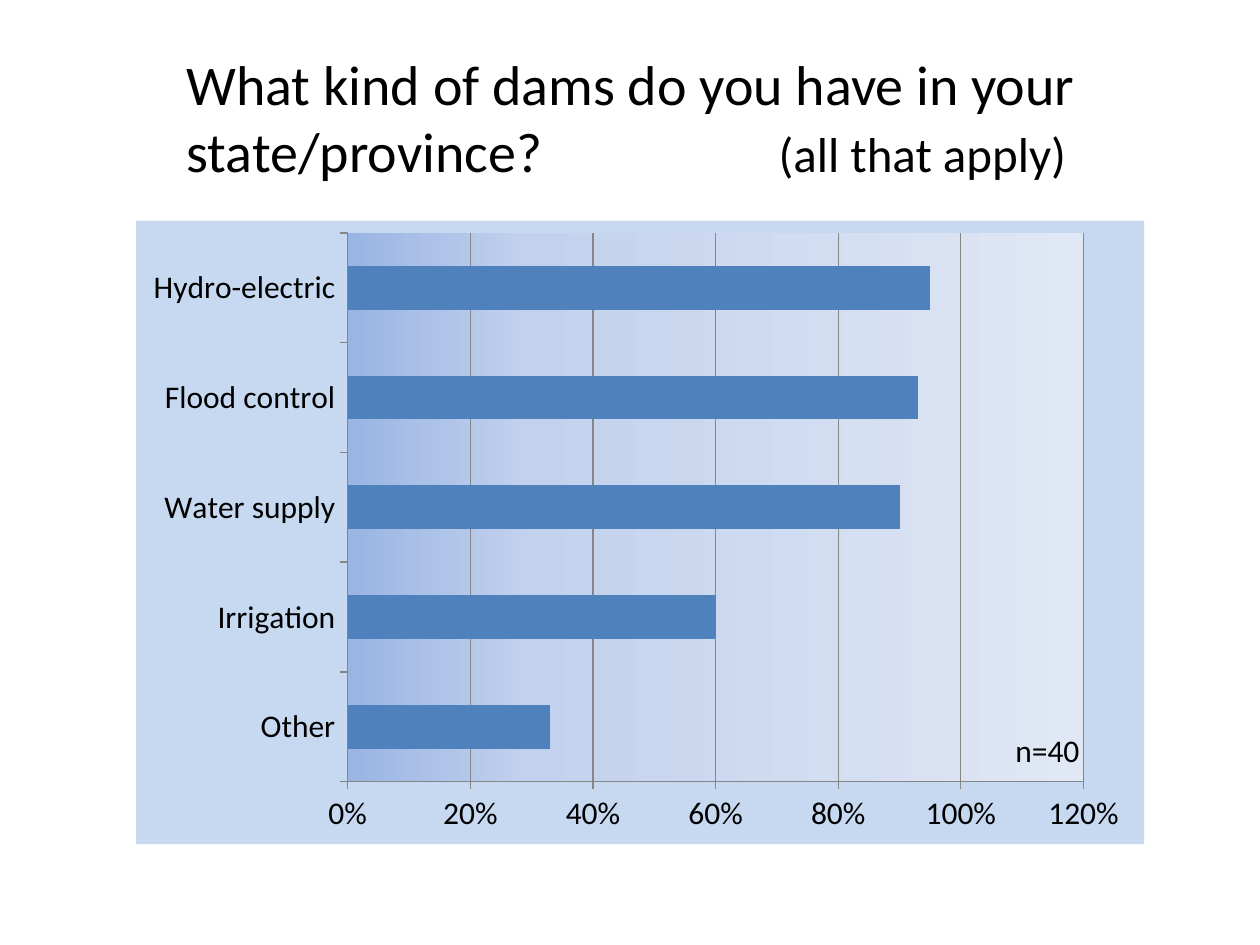
from dataclasses import dataclass

from pptx import Presentation
from pptx.chart.data import CategoryChartData
from pptx.dml.color import RGBColor
from pptx.enum.chart import XL_CHART_TYPE, XL_TICK_MARK
from pptx.enum.text import MSO_ANCHOR, MSO_AUTO_SIZE
from pptx.oxml import parse_xml
from pptx.oxml.ns import nsdecls
from pptx.util import Inches, Pt

BAR = XL_CHART_TYPE.BAR_CLUSTERED
TICK_OUT, TICK_NONE = XL_TICK_MARK.OUTSIDE, XL_TICK_MARK.NONE
MIDDLE = MSO_ANCHOR.MIDDLE
FIT_SHAPE = MSO_AUTO_SIZE.SHAPE_TO_FIT_TEXT


@dataclass(frozen=True)
class Theme:
    font: str = "Calibri"
    text: str = "000000"
    bar: str = "4F81BD"
    grid: str = "868686"
    chart_fill: str = "C6D9F1"
    plot_stops: tuple = ((0, "9AB5E4"), (25, "C2D1ED"), (100, "E1E8F5"))
    title_size: int = 32
    note_size: int = 28
    body_size: int = 18


class SlideBuilder:
    def __init__(self, slide, theme):
        self.s, self.theme = slide, theme

    def style(self, font, size):
        font.name, font.size = self.theme.font, Pt(size)
        font.color.rgb = RGBColor.from_string(self.theme.text)

    def box(self, left, top, width, height):
        sp = self.s.shapes.add_textbox(
            Inches(left), Inches(top), Inches(width), Inches(height))
        return sp.text_frame

    def title(self, text, note, at, indent, note_at):
        """Add a title whose smaller note starts at a tab stop."""
        tf = self.box(*at)
        tf.word_wrap = True
        tf.vertical_anchor = MIDDLE
        tf.margin_left = Inches(indent)
        p = tf.paragraphs[0]
        p._p.get_or_add_pPr().append(parse_xml(
            f'<a:tabLst {nsdecls("a")}><a:tab pos="{Inches(note_at)}" algn="l"/></a:tabLst>'))
        self.style(p.font, self.theme.title_size)
        for words, size in ((text + "\t", self.theme.title_size),
                            (note, self.theme.note_size)):
            r = p.add_run()
            r.text = words
            self.style(r.font, size)

    def label(self, text, at):
        tf = self.box(*at)
        tf.word_wrap = True
        tf.auto_size = FIT_SHAPE
        p = tf.paragraphs[0]
        p.text = text
        self.style(p.font, self.theme.body_size)

    def bar_chart(self, shares, at, plot):
        data = CategoryChartData(number_format="0%")
        data.categories = list(shares)
        data.add_series("Series 1", list(shares.values()))
        chart = self.s.shapes.add_chart(BAR, *map(Inches, at), data).chart
        chart.has_title = chart.has_legend = False
        self.style(chart.font, self.theme.body_size)

        bars = chart.plots[0]
        bars.gap_width, bars.vary_by_categories = 150, False
        fill = bars.series[0].format.fill
        fill.solid()
        fill.fore_color.rgb = RGBColor.from_string(self.theme.bar)

        values = chart.value_axis
        values.minimum_scale, values.maximum_scale, values.major_unit = 0, 1.2, 0.2
        values.tick_labels.number_format = "0%"
        values.tick_labels.number_format_is_linked = False
        values.has_major_gridlines = True
        lines = [values.major_gridlines.format.line]
        for axis in (chart.category_axis, values):
            axis.major_tick_mark, axis.minor_tick_mark = TICK_OUT, TICK_NONE
            lines.append(axis.format.line)
        for line in lines:
            line.color.rgb = RGBColor.from_string(self.theme.grid)
            line.width = Pt(0.75)
        self.chart_backgrounds(chart, plot)

    def chart_backgrounds(self, chart, plot):
        """Fill the chart and plot areas and fix the inner plot position."""
        space = chart._chartSpace
        area = space.chart.plotArea
        ns = nsdecls("c", "a")
        no_line = "<a:ln><a:noFill/></a:ln>"
        space.chart.addnext(parse_xml(
            f'<c:spPr {ns}><a:solidFill><a:srgbClr val="{self.theme.chart_fill}"/>'
            f"</a:solidFill>{no_line}</c:spPr>"))
        stops = "".join(f'<a:gs pos="{pos * 1000}"><a:srgbClr val="{color}"/></a:gs>'
                        for pos, color in self.theme.plot_stops)
        area.append(parse_xml(
            f"<c:spPr {ns}><a:gradFill><a:gsLst>{stops}</a:gsLst>"
            f'<a:lin ang="0" scaled="0"/></a:gradFill>{no_line}</c:spPr>'))
        for old in area.xpath("c:layout"):
            area.remove(old)
        sizes = "".join(f'<c:{key} val="{val}"/>' for key, val in zip("xywh", plot))
        area.insert(0, parse_xml(
            f'<c:layout {ns}><c:manualLayout><c:layoutTarget val="inner"/>'
            f'<c:xMode val="edge"/><c:yMode val="edge"/>{sizes}'
            "</c:manualLayout></c:layout>"))


def main():
    prs = Presentation()
    prs.slide_width, prs.slide_height = Inches(10), Inches(7.5)
    s = SlideBuilder(prs.slides.add_slide(prs.slide_layouts[6]), Theme())
    s.title("What kind of dams do you have in your state/province?",
            "(all that apply)", at=(0.5, 0.3, 9, 1.25), indent=0.98, note_at=4.7)
    shares = {"Other": 0.33, "Irrigation": 0.6, "Water supply": 0.9,
              "Flood control": 0.93, "Hydro-electric": 0.95}
    s.bar_chart(shares, at=(1.08, 1.75, 8, 4.95), plot=(0.21, 0.02, 0.73, 0.88))
    s.label("n=40", at=(7.96, 5.75, 0.75, 0.4))
    prs.save("out.pptx")


if __name__ == "__main__":
    main()
